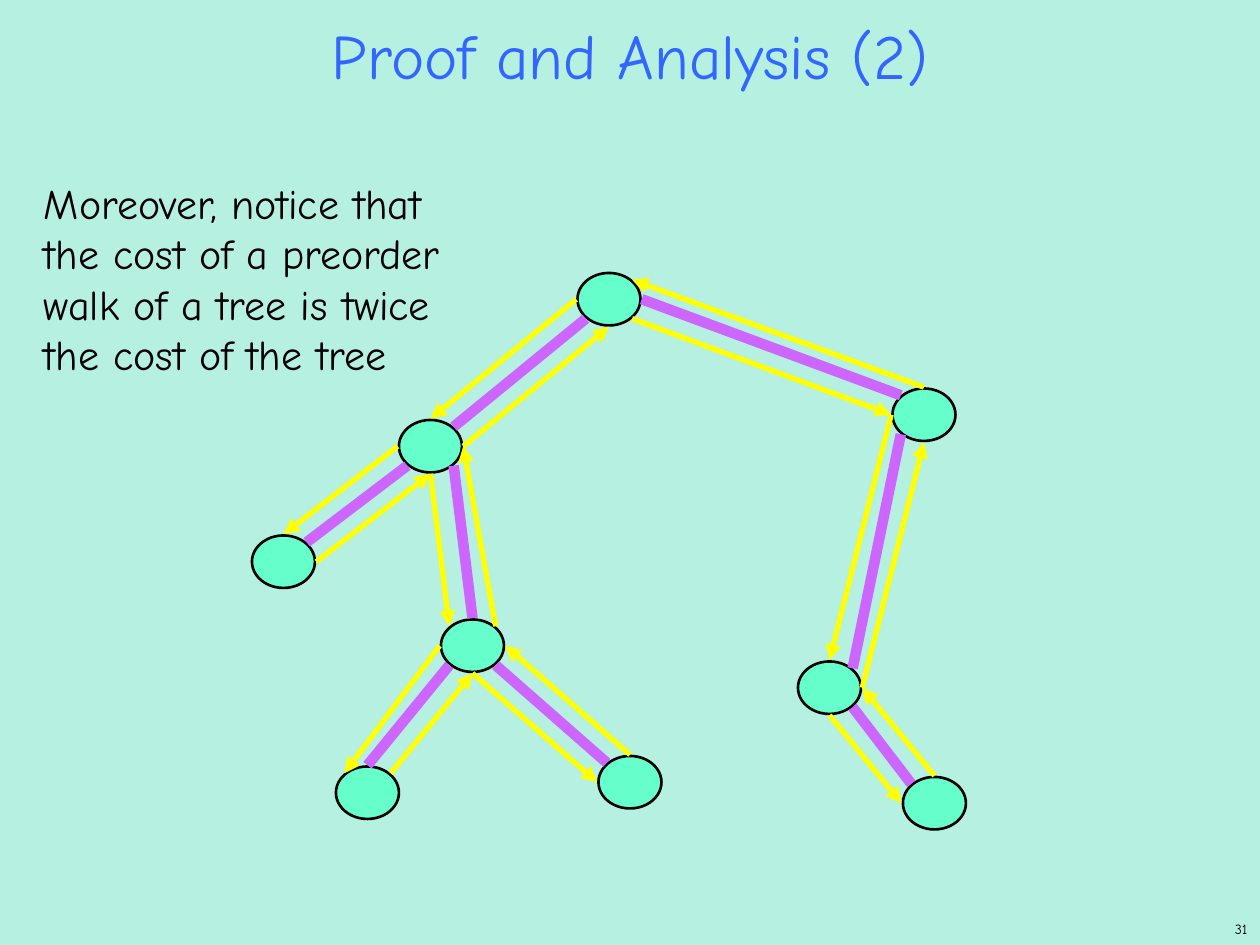
from dataclasses import dataclass
from math import cos, radians, sin

from lxml import etree
from pptx import Presentation
from pptx.dml.color import RGBColor
from pptx.enum.shapes import MSO_CONNECTOR, MSO_SHAPE
from pptx.enum.text import MSO_ANCHOR, PP_ALIGN
from pptx.oxml.ns import qn
from pptx.util import Inches, Pt

STRAIGHT = MSO_CONNECTOR.STRAIGHT
OVAL = MSO_SHAPE.OVAL
MIDDLE = MSO_ANCHOR.MIDDLE
LEFT, CENTER, RIGHT = PP_ALIGN.LEFT, PP_ALIGN.CENTER, PP_ALIGN.RIGHT

MINT = RGBColor(0xB5, 0xF0, 0xE1)
AQUA = RGBColor(0x66, 0xFF, 0xCC)
BLUE = RGBColor(0x33, 0x66, 0xFF)
PURPLE = RGBColor(0xCC, 0x66, 0xFF)
YELLOW = RGBColor(0xFF, 0xFF, 0x00)
BLACK = RGBColor(0x00, 0x00, 0x00)
FONT = "Comic Neue"

# Grid of 12 units to the inch
UNIT = Inches(1) / 12
NODE_COLUMNS, NODE_ROWS = 6, 5
GAP = 0.12  # space between a node's outline and a line end

# Compass points on a node, as angles clockwise from east
ANGLES = {"E": 0, "SE": 45, "S": 90, "SW": 135,
          "W": 180, "NW": 225, "N": 270, "NE": 315}


@dataclass(frozen=True)
class Node:
    column: float
    row: float

    def point(self, compass: str) -> tuple[int, int]:
        angle = radians(ANGLES[compass])
        x = self.column + NODE_COLUMNS / 2 + (NODE_COLUMNS / 2 + GAP) * cos(angle)
        y = self.row + NODE_ROWS / 2 + (NODE_ROWS / 2 + GAP) * sin(angle)
        return grid(x), grid(y)


@dataclass(frozen=True)
class Link:
    start: str
    start_side: str
    end: str
    end_side: str


NODES = {
    "root": Node(55, 26),
    "left": Node(38, 40),
    "left leaf": Node(24, 51),
    "fork": Node(42, 59),
    "fork left": Node(32, 73),
    "fork right": Node(57, 72),
    "right": Node(85, 37),
    "right child": Node(76, 63),
    "right leaf": Node(86, 74),
}

TREE_EDGES = [
    Link("root", "SW", "left", "NE"),
    Link("left", "SW", "left leaf", "NE"),
    Link("left", "SE", "fork", "N"),
    Link("fork", "SW", "fork left", "N"),
    Link("fork", "SE", "fork right", "NW"),
    Link("root", "E", "right", "NW"),
    Link("right", "SW", "right child", "NE"),
    Link("right child", "SE", "right leaf", "NW"),
]

# The preorder walk, step by step
WALK = [
    Link("root", "W", "left", "N"),
    Link("left", "W", "left leaf", "N"),
    Link("left leaf", "E", "left", "S"),
    Link("left", "S", "fork", "NW"),
    Link("fork", "W", "fork left", "NW"),
    Link("fork left", "NE", "fork", "S"),
    Link("fork", "S", "fork right", "W"),
    Link("fork right", "N", "fork", "E"),
    Link("fork", "NE", "left", "E"),
    Link("left", "E", "root", "S"),
    Link("root", "SE", "right", "W"),
    Link("right", "W", "right child", "N"),
    Link("right child", "S", "right leaf", "W"),
    Link("right leaf", "N", "right child", "E"),
    Link("right child", "E", "right", "S"),
    Link("right", "N", "root", "NE"),
]


def grid(units: float) -> int:
    return round(units * UNIT)


def place(shape, left: float, top: float, width: float, height: float) -> None:
    shape.left, shape.top = grid(left), grid(top)
    shape.width, shape.height = grid(width), grid(height)


def write(shape, text: str, size: float, color: RGBColor, alignment):
    frame = shape.text_frame
    frame.word_wrap = True
    frame.vertical_anchor = MIDDLE
    paragraph = frame.paragraphs[0]
    paragraph.alignment = alignment
    run = paragraph.add_run()
    run.text = text
    run.font.name = FONT
    run.font.size = Pt(size)
    run.font.color.rgb = color
    return paragraph


def draw_node(slide, node: Node) -> None:
    shape = slide.shapes.add_shape(OVAL, 0, 0, 0, 0)
    place(shape, node.column, node.row, NODE_COLUMNS, NODE_ROWS)
    shape.shadow.inherit = False
    shape.fill.solid()
    shape.fill.fore_color.rgb = AQUA
    shape.line.color.rgb = BLACK
    shape.line.width = Pt(1.5)


def draw_link(slide, link: Link, color: RGBColor, width: float, arrow: bool) -> None:
    start = NODES[link.start].point(link.start_side)
    end = NODES[link.end].point(link.end_side)
    connector = slide.shapes.add_connector(STRAIGHT, *start, *end)
    connector.line.color.rgb = color
    connector.line.width = Pt(width)
    if arrow:
        line = connector.line._get_or_add_ln()
        etree.SubElement(line, qn("a:tailEnd"), type="triangle")
    etree.SubElement(connector._element.spPr, qn("a:effectLst"))


def main() -> None:
    presentation = Presentation()
    presentation.slide_width = Inches(10)
    presentation.slide_height = Inches(7.5)
    slide = presentation.slides.add_slide(presentation.slide_layouts[5])
    slide.background.fill.solid()
    slide.background.fill.fore_color.rgb = MINT

    # Title
    title = slide.shapes.title
    place(title, 0, 3.1, 120, 6)
    write(title, "Proof and Analysis (2)", 36, BLUE, CENTER).line_spacing = 0.7

    # Tree and its preorder walk
    for node in NODES.values():
        draw_node(slide, node)
    for edge in TREE_EDGES:
        draw_link(slide, edge, PURPLE, 6, arrow=False)
    for step in WALK:
        draw_link(slide, step, YELLOW, 3, arrow=True)

    # Remark and page number
    remark = slide.shapes.add_textbox(0, 0, 0, 0)
    place(remark, 3, 13.8, 41, 25.4)
    write(remark, "Moreover, notice that the cost of a preorder walk of a tree "
          "is twice the cost of the tree", 24, BLACK, LEFT)
    page_number = slide.shapes.add_textbox(0, 0, 0, 0)
    place(page_number, 95, 87, 25, 3)
    write(page_number, "31", 8, BLACK, RIGHT)

    presentation.save("out.pptx")


if __name__ == "__main__":
    main()
